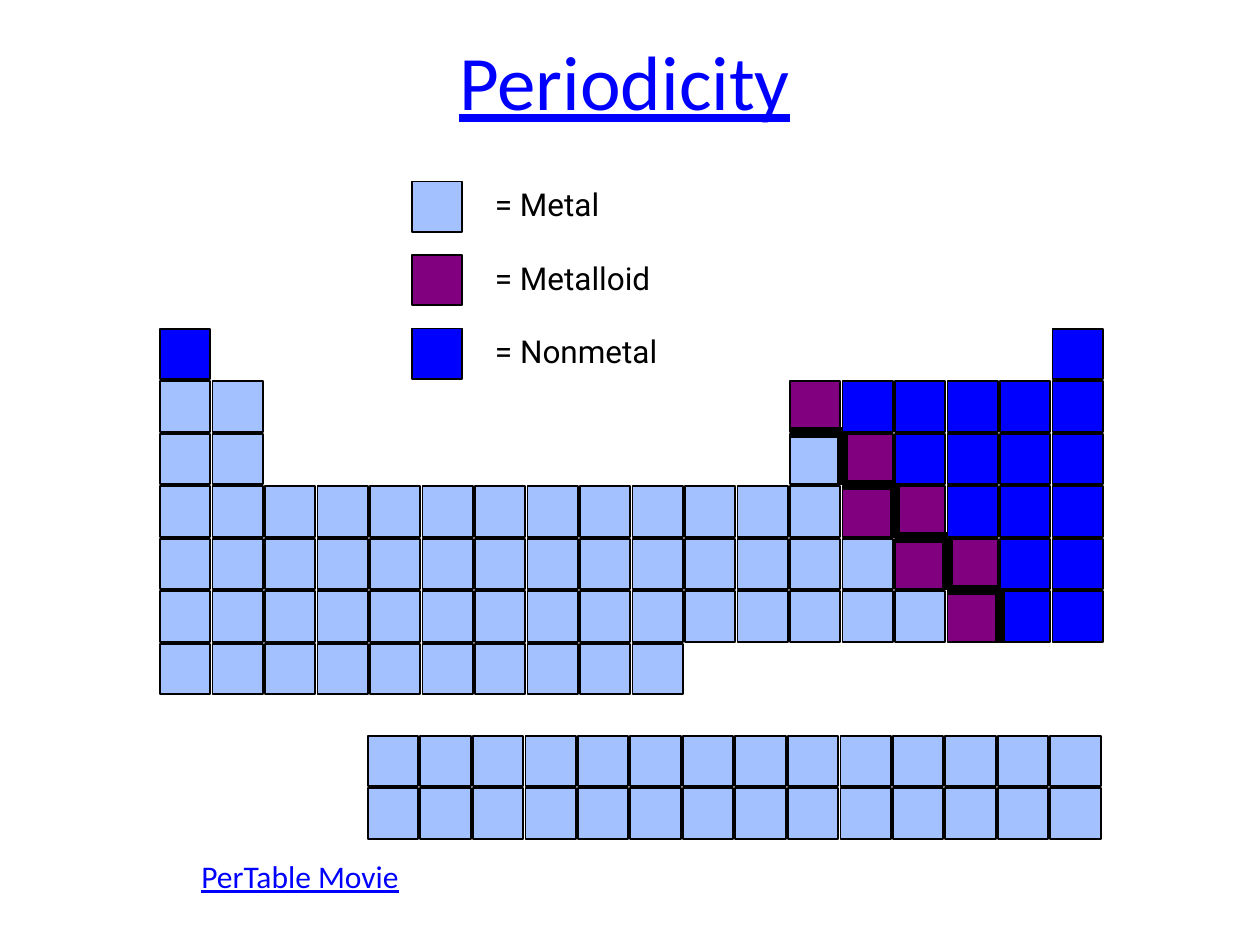
from pptx import Presentation
from pptx.dml.color import RGBColor
from pptx.enum.shapes import MSO_CONNECTOR, MSO_SHAPE
from pptx.enum.text import MSO_ANCHOR, PP_ALIGN
from pptx.oxml.ns import qn
from pptx.util import Inches, Pt
from lxml.etree import SubElement

COLORS = {"M": "A2C1FE", "S": "800080", "N": "0000FF",
          "line": "000000", "text": "000000", "link": "0000FF", "back": "FFFFFF"}
SIDE = 0.4
STEP = 5 / 12
LEFT, TOP = 1.27, 2.61


def rgb(name):
    return RGBColor.from_string(COLORS[name])


def put(shape, text, size=18, font="Calibri", color="link", line=True,
        align=PP_ALIGN.LEFT, anchor=MSO_ANCHOR.TOP, wrap=True):
    frame = shape.text_frame
    frame.word_wrap = wrap
    frame.vertical_anchor = anchor
    par = frame.paragraphs[0]
    par.alignment = align
    run = par.add_run()
    run.text = text
    run.font.size = Pt(size)
    run.font.name = font
    run.font.underline = line
    run.font.color.rgb = rgb(color)


deck = Presentation()
deck.slide_width, deck.slide_height = Inches(10), Inches(7.5)
slide = deck.slides.add_slide(deck.slide_layouts[5])
shapes = slide.shapes

title = shapes.title
title.left, title.top = Inches(1.5), Inches(0.17)
title.width, title.height = Inches(6.92), Inches(0.92)
title.fill.solid()
title.fill.fore_color.rgb = rgb("back")
put(title, "Periodicity", size=44, align=PP_ALIGN.CENTER, anchor=MSO_ANCHOR.MIDDLE)

# One letter per cell: M metal, S metalloid, N nonmetal, dot for a gap
main = [
    "N" + "." * 16 + "N",
    "MM" + "." * 10 + "SNNNNN",
    "MM" + "." * 10 + "MSNNNN",
    "M" * 13 + "SSNNN",
    "M" * 14 + "SSNN",
    "M" * 15 + "SNN",
    "M" * 10,
]
series = ["M" * 14] * 2
legend = [("M", "= Metal", 1.24), ("S", "= Metalloid", 1.76), ("N", "= Nonmetal", 1.78)]

cells = []
for rows, left, top, home in [(main, LEFT, TOP, shapes),
                              (series, 2.92, 5.84, shapes.add_group_shape().shapes)]:
    for row, kinds in enumerate(rows):
        for col, kind in enumerate(kinds):
            if kind != ".":
                cells.append((home, kind, left + col * STEP, top + row * STEP))
for row, (kind, label, width) in enumerate(legend):
    top = 1.44 + row * 7 / 12
    cells.append((shapes, kind, 3.27, top))
    box = shapes.add_textbox(Inches(3.83), Inches(top - 0.02), Inches(width), Inches(0.5))
    put(box, label, font="Roboto", color="text", line=False, wrap=False)

for home, kind, left, top in cells:
    cell = home.add_shape(MSO_SHAPE.RECTANGLE, Inches(left), Inches(top),
                          Inches(SIDE), Inches(SIDE))
    cell.shadow.inherit = False
    cell.fill.solid()
    cell.fill.fore_color.rgb = rgb(kind)
    cell.line.color.rgb = rgb("line")
    cell.line.width = Pt(1)

# Staircase between metals and nonmetals
x, y = LEFT + 12 * STEP, TOP + 2 * STEP - 0.01
for dx, dy in [(STEP, 0), (0, STEP)] * 4:
    stair = shapes.add_connector(MSO_CONNECTOR.STRAIGHT, Inches(x), Inches(y),
                                 Inches(x + dx), Inches(y + dy))
    stair.line.color.rgb = rgb("line")
    stair.line.width = Pt(6)
    SubElement(stair._element.spPr, qn("a:effectLst"))
    x, y = x + dx, y + dy

movie = shapes.add_textbox(Inches(1.5), Inches(6.75), Inches(4.67), Inches(0.5))
put(movie, "PerTable Movie")

deck.save("out.pptx")
